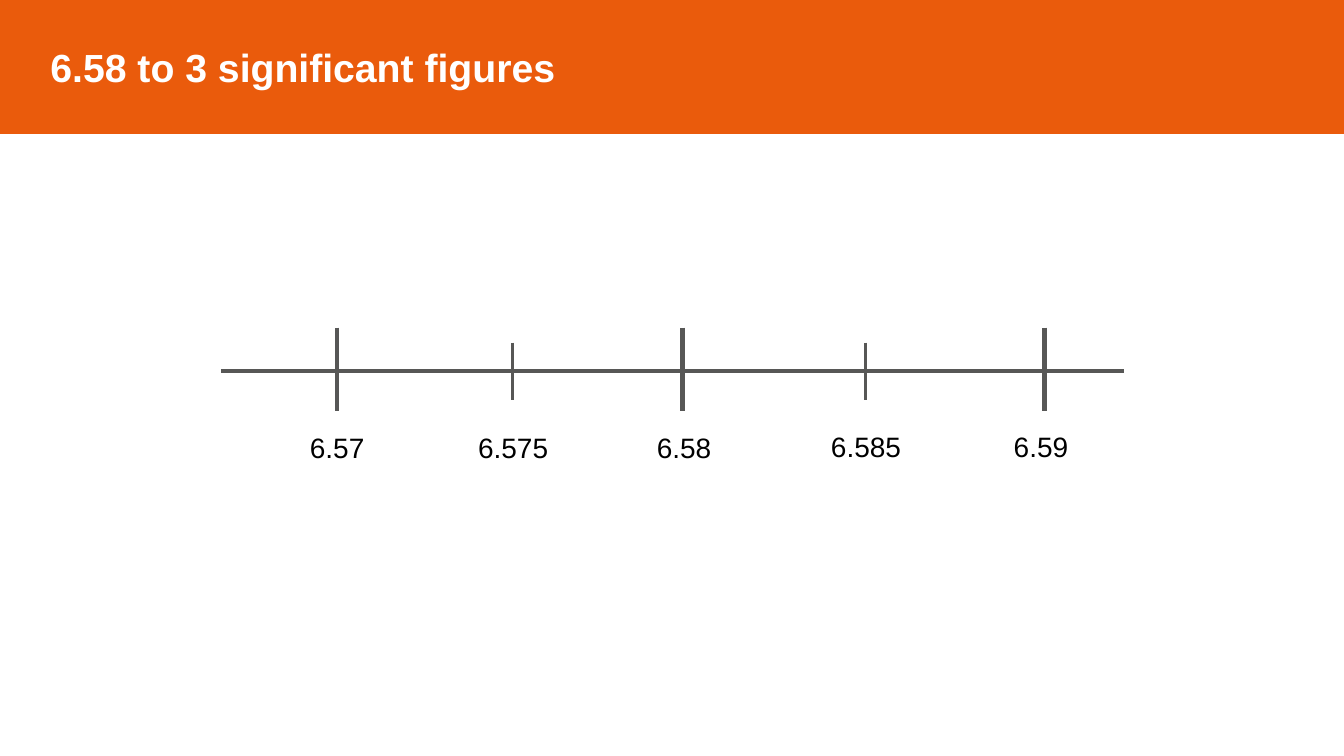
from lxml.etree import SubElement
from pptx import Presentation
from pptx.dml.color import RGBColor
from pptx.enum.shapes import MSO_CONNECTOR
from pptx.enum.text import MSO_ANCHOR, PP_ALIGN
from pptx.oxml.ns import qn
from pptx.util import Inches, Pt

WIDTH, HEIGHT = Inches(13.33), Inches(7.5)
ORANGE, GREY, WHITE, BLACK = "EA5B0C", "575756", "FFFFFF", "000000"
AXIS_LEFT, AXIS_RIGHT, AXIS_ROW = 16.43, 83.65, 49.07
MAJOR = {"top": 43.33, "bottom": 54.4, "weight": 3, "label_width": 5.63}
MINOR = {"top": 45.33, "bottom": 52.93, "weight": 2, "label_width": 6.75}
TICKS = [
    ("6.57", 25.06, 25.09, 56.27, MAJOR),
    ("6.575", 38.11, 38.18, 56.27, MINOR),
    ("6.58", 50.79, 50.9, 56.27, MAJOR),
    ("6.585", 64.37, 64.44, 56.13, MINOR),
    ("6.59", 77.72, 77.46, 56.13, MAJOR),
]


def across(percent):
    """Return a share of the slide's width."""
    return round(WIDTH * percent / 100)


def down(percent):
    """Return a share of the slide's height."""
    return round(HEIGHT * percent / 100)


def paint(colour_format, colour):
    """Set a colour from a hex string."""
    colour_format.rgb = RGBColor.from_string(colour)


def write(frame, text, size=20, colour=BLACK, bold=False,
          align=PP_ALIGN.CENTER, anchor=MSO_ANCHOR.TOP, indent=0):
    """Put one formatted line of text in a frame."""
    frame.word_wrap = True
    frame.vertical_anchor = anchor
    frame.margin_left, frame.margin_right = Inches(indent), 0
    para = frame.paragraphs[0]
    para.alignment = align
    span = para.add_run()
    span.text = text
    span.font.name, span.font.size, span.font.bold = "Arial", Pt(size), bold
    paint(span.font.color, colour)


def add_title_band(page, text):
    """Turn the title placeholder into the coloured band."""
    band = page.shapes.title
    band.left, band.top, band.width, band.height = 0, 0, WIDTH, down(17.6)
    band.fill.solid()
    paint(band.fill.fore_color, ORANGE)
    paint(band.line.color, ORANGE)
    band.line.width = Pt(1)
    write(band.text_frame, text, size=28, colour=WHITE, bold=True,
          align=PP_ALIGN.LEFT, anchor=MSO_ANCHOR.MIDDLE, indent=0.5)


def add_line(page, left, top, right, bottom, weight):
    """Draw a plain grey line between two points."""
    line = page.shapes.add_connector(
        MSO_CONNECTOR.STRAIGHT,
        across(left), down(top), across(right), down(bottom))
    paint(line.line.color, GREY)
    line.line.width = Pt(weight)
    SubElement(line._element.spPr, qn("a:effectLst"))


def add_label(page, text, centre, top, width):
    """Write a value centred on a point of the number line."""
    box = page.shapes.add_textbox(
        across(centre - width / 2), down(top), across(width), down(5.87))
    write(box.text_frame, text)


def main():
    """Build the number line slide."""
    deck = Presentation()
    deck.slide_width, deck.slide_height = WIDTH, HEIGHT
    page = deck.slides.add_slide(deck.slide_layouts[5])
    add_title_band(page, "6.58 to 3 significant figures")
    add_line(page, AXIS_LEFT, AXIS_ROW, AXIS_RIGHT, AXIS_ROW, 3)
    for value, column, label_centre, label_top, kind in TICKS:
        add_line(page, column, kind["top"], column, kind["bottom"], kind["weight"])
        add_label(page, value, label_centre, label_top, kind["label_width"])
    deck.save("out.pptx")


if __name__ == "__main__":
    main()
